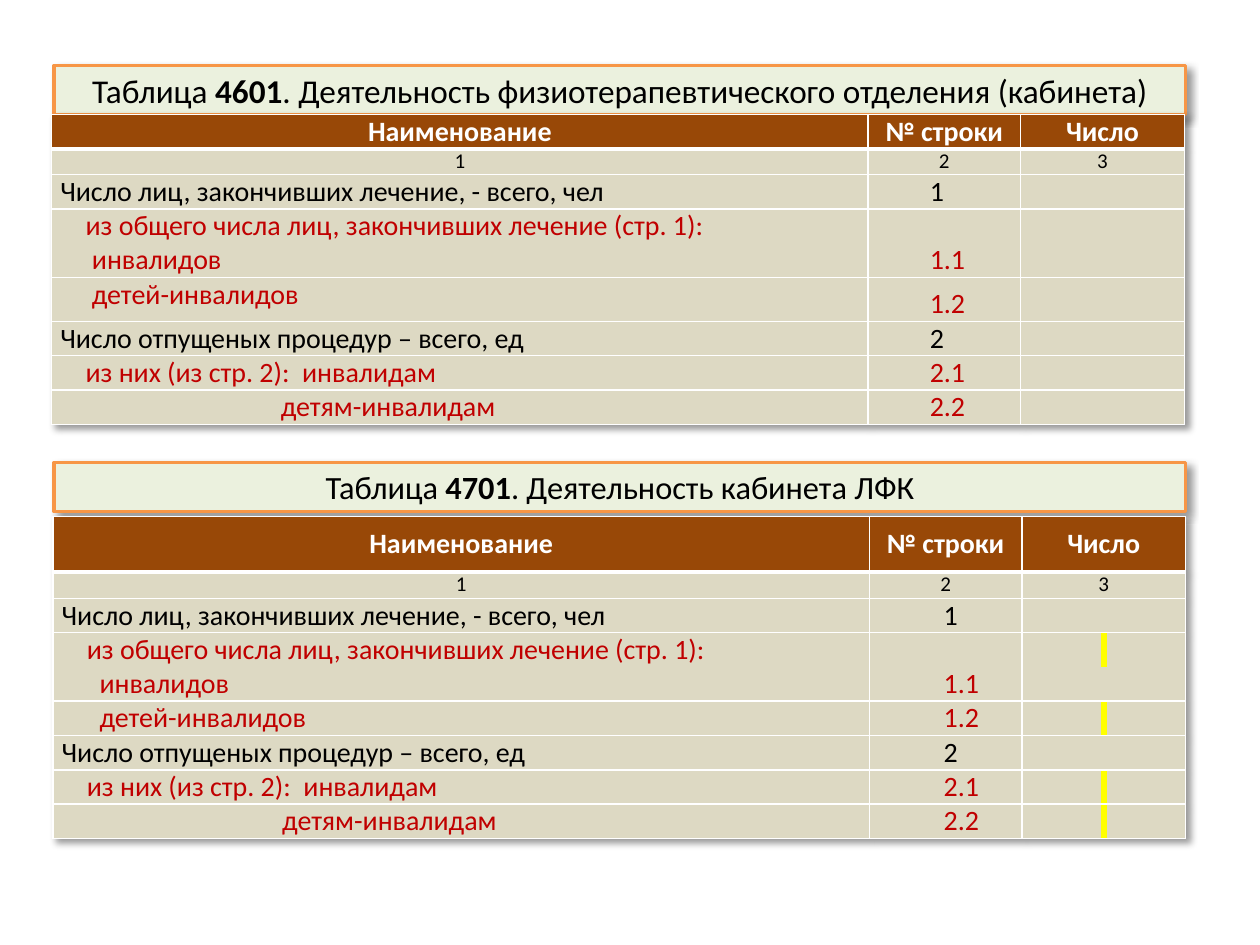
from lxml.etree import SubElement
from pptx import Presentation
from pptx.dml.color import RGBColor
from pptx.enum.shapes import MSO_SHAPE
from pptx.enum.text import MSO_ANCHOR as Anchor, MSO_AUTO_SIZE as AutoSize, PP_ALIGN as Align
from pptx.oxml.ns import qn
from pptx.util import Inches, Pt

WHITE = RGBColor(0xFF, 0xFF, 0xFF)
BLACK = RGBColor(0x00, 0x00, 0x00)
RED = RGBColor(0xC0, 0x00, 0x00)
BROWN = RGBColor(0x98, 0x48, 0x07)
SAND = RGBColor(0xDD, 0xD9, 0xC3)
MINT = RGBColor(0xEB, 0xF1, 0xDE)
ORANGE = RGBColor(0xF7, 0x96, 0x46)
YELLOW = RGBColor(0xFF, 0xFF, 0x00)

FONT = "Calibri"
HEADINGS = ["Наименование", "№ строки", "Число"]
COLUMN_WIDTHS = [6.48, 1.21, 1.3]
PHYSIO_HEIGHTS = [0.25, 0.19, 0.25, 0.45, 0.35, 0.25, 0.25, 0.25]
EXERCISE_HEIGHTS = [0.44, 0.21] + [0.26] * 6


def indicator_rows(group_indent):
    return [
        ([("Число лиц, закончивших лечение, - всего, чел", 0)], "1", BLACK),
        ([("из общего числа лиц, закончивших лечение (стр. 1):", 0.2),
          ("инвалидов", group_indent)], "1.1", RED),
        ([("детей-инвалидов", group_indent)], "1.2", RED),
        ([("Число отпущеных процедур – всего, ед", 0)], "2", BLACK),
        ([("из них (из стр. 2):  инвалидам", 0.2)], "2.1", RED),
        ([("детям-инвалидам", 1.75)], "2.2", RED),
    ]


def add_color(parent, color):
    return SubElement(parent, qn("a:srgbClr"), val=str(color))


def add_shadow(effects):
    shadow = SubElement(effects, qn("a:outerShdw"), blurRad=str(Pt(4)), dist=str(Pt(3)),
                        dir="2700000", algn="tl", rotWithShape="0")
    SubElement(add_color(shadow, BLACK), qn("a:alpha"), val="40000")


def style_run(run, size, color, bold=False):
    run.font.name = FONT
    run.font.size = Pt(size)
    run.font.color.rgb = color
    run.font.bold = bold


def format_caption(caption, top, number, subject, size):
    caption.left, caption.top = Inches(0.43), Inches(top)
    caption.width, caption.height = Inches(8.98), Inches(0.39)
    caption.fill.solid()
    caption.fill.fore_color.rgb = MINT
    caption.line.color.rgb = ORANGE
    caption.line.width = Pt(2)
    caption.shadow.inherit = False
    add_shadow(caption.element.spPr.find(qn("a:effectLst")))
    frame = caption.text_frame
    frame.auto_size = AutoSize.NONE
    frame.word_wrap = True
    frame.vertical_anchor = Anchor.MIDDLE
    paragraph = frame.paragraphs[0]
    paragraph.alignment = Align.CENTER
    for text, bold in [("Таблица ", False), (number, True), (f". {subject}", False)]:
        run = paragraph.add_run()
        run.text = text
        style_run(run, size, BLACK, bold)


def format_cell(cell, fill, top_line=1, bottom_line=1):
    cell.margin_left = cell.margin_right = Inches(0.07)
    cell.margin_top = cell.margin_bottom = 0
    properties = cell._tc.get_or_add_tcPr()
    for side, width in [("L", 1), ("R", 1), ("T", top_line), ("B", bottom_line)]:
        border = SubElement(properties, qn(f"a:ln{side}"), w=str(Pt(width)))
        add_color(SubElement(border, qn("a:solidFill")), WHITE)
    cell.fill.solid()
    cell.fill.fore_color.rgb = fill


def write_cell(cell, lines, size, color, align, anchor=Anchor.TOP, bold=False):
    cell.vertical_anchor = anchor
    cell.text_frame.text = "\n".join(text for text, _ in lines)
    for paragraph, (_, indent) in zip(cell.text_frame.paragraphs, lines):
        paragraph.alignment = align
        paragraph._p.get_or_add_pPr().set("marL", str(Inches(indent)))
        style_run(paragraph.runs[0], size, color, bold)


def mark_cell(cell):
    write_cell(cell, [(" ", 0)], 16, BLACK, Align.CENTER)
    run_properties = cell.text_frame.paragraphs[0].runs[0].font._element
    highlight = run_properties.makeelement(qn("a:highlight"), {})
    add_color(highlight, YELLOW)
    run_properties.find(qn("a:solidFill")).addnext(highlight)


def add_indicator_table(slide, left, top, heights, indicators, number_indent, marked):
    frame = slide.shapes.add_table(len(heights), len(COLUMN_WIDTHS), Inches(left), Inches(top),
                                   Inches(sum(COLUMN_WIDTHS)), Inches(sum(heights)))
    table = frame.table
    table_properties = table._tbl.tblPr
    effects = table_properties.makeelement(qn("a:effectLst"), {})
    table_properties.insert(0, effects)
    add_shadow(effects)
    for column, width in zip(table.columns, COLUMN_WIDTHS):
        column.width = Inches(width)
    for row, height in zip(table.rows, heights):
        row.height = Inches(height)

    for index, heading in enumerate(HEADINGS):
        header, numbering = table.cell(0, index), table.cell(1, index)
        format_cell(header, BROWN, bottom_line=3)
        write_cell(header, [(heading, 0)], 16, WHITE, Align.CENTER, Anchor.MIDDLE, True)
        format_cell(numbering, SAND, top_line=3)
        write_cell(numbering, [(str(index + 1), 0)], 12, BLACK, Align.CENTER)

    for index, (lines, number, color) in enumerate(indicators, start=2):
        name_cell, number_cell, value_cell = table.rows[index].cells
        for cell in (name_cell, number_cell, value_cell):
            format_cell(cell, SAND)
        write_cell(name_cell, lines, 16, color, Align.JUSTIFY)
        write_cell(number_cell, [(number, number_indent)], 16, color, Align.LEFT, Anchor.BOTTOM)
        if marked and color == RED:
            mark_cell(value_cell)
        else:
            SubElement(value_cell.text_frame.paragraphs[0]._p, qn("a:endParaRPr"), sz="1600")


def main():
    presentation = Presentation()
    presentation.slide_width, presentation.slide_height = Inches(10), Inches(7.5)
    slide = presentation.slides.add_slide(presentation.slide_layouts[5])

    format_caption(slide.shapes.title, 0.52, "4601",
                   "Деятельность физиотерапевтического отделения (кабинета)", 19)
    add_indicator_table(slide, 0.41, 0.91, PHYSIO_HEIGHTS, indicator_rows(0.25), 0.42, False)

    exercise_caption = slide.shapes.add_shape(MSO_SHAPE.RECTANGLE, 0, 0, 0, 0)
    format_caption(exercise_caption, 3.67, "4701", "Деятельность кабинета ЛФК", 18.5)
    add_indicator_table(slide, 0.42, 4.1, EXERCISE_HEIGHTS, indicator_rows(0.3), 0.52, True)

    presentation.save("out.pptx")


if __name__ == "__main__":
    main()
